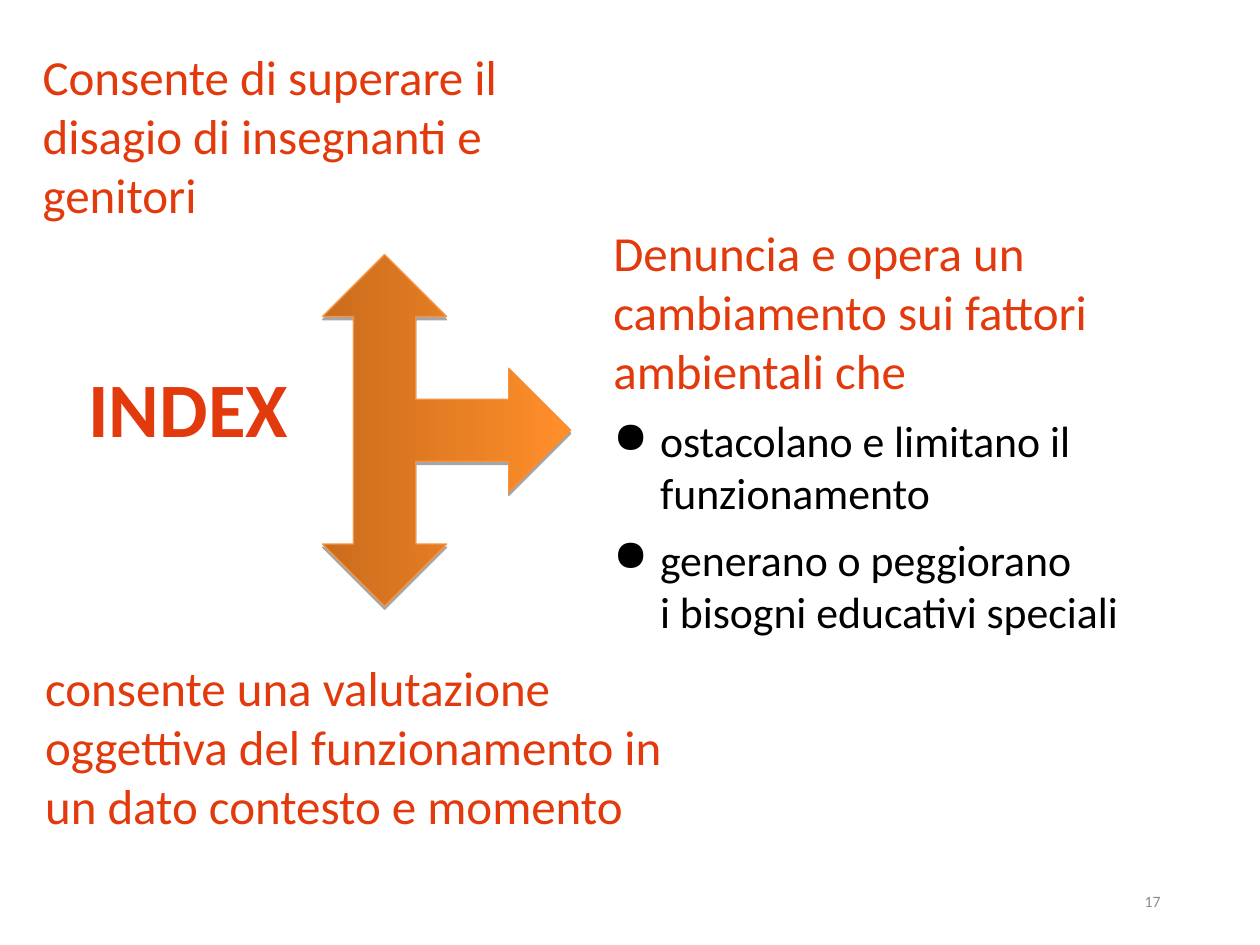
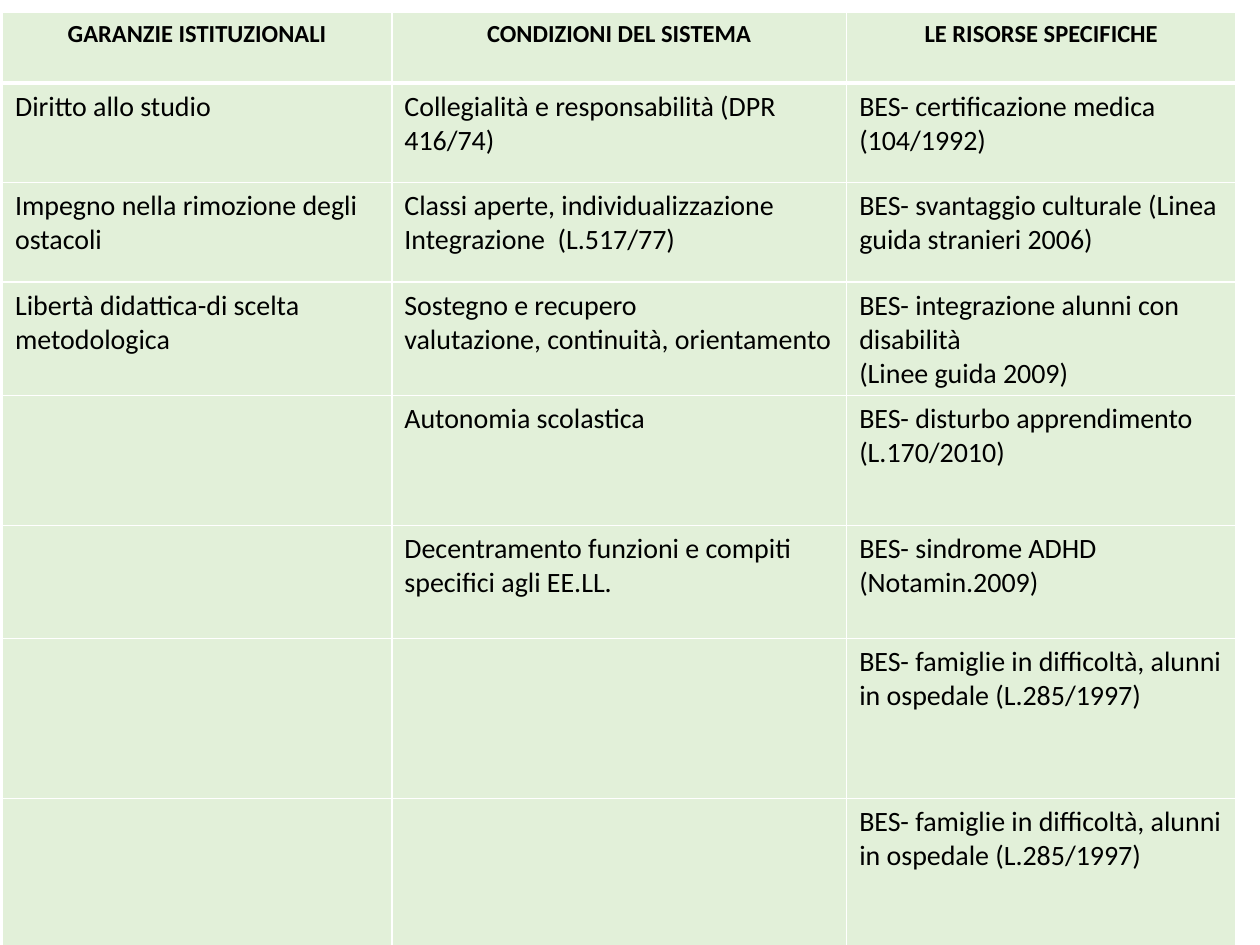
from dataclasses import dataclass
from typing import Optional

from lxml import etree
from pptx import Presentation
from pptx.dml.color import RGBColor
from pptx.enum import shapes, text
from pptx.oxml import parse_xml
from pptx.oxml.ns import nsdecls, qn
from pptx.util import Emu, Pt

EMU_PER_PX = 9144  # 100 px to the inch


def px(length: int) -> Emu:
    return Emu(length * EMU_PER_PX)


# Colours and type sizes
@dataclass(frozen=True)
class Theme:
    font: str = "Calibri"
    accent: str = "E23A0C"
    ink: str = "000000"
    muted: str = "8C8C8C"
    cell: str = "E2F0D9"
    rule: str = "FFFFFF"
    arrow_dark: str = "CB6C1D"
    arrow_light: str = "FF8F2A"
    arrow_edge: str = "F69240"
    label_size: int = 44
    statement_size: int = 28
    bullet_size: int = 25
    body_size: int = 16
    header_size: int = 14
    number_size: int = 9


THEME = Theme()


@dataclass(frozen=True)
class Style:
    size: int
    color: str = THEME.ink
    bold: bool = False
    align: text.PP_ALIGN = text.PP_ALIGN.LEFT
    space_before: int = 0
    bullet: Optional[str] = None


STATEMENT = Style(THEME.statement_size, THEME.accent, space_before=8)
BULLET = Style(THEME.bullet_size, space_before=8, bullet="●")
LABEL = Style(THEME.label_size, THEME.accent, True, text.PP_ALIGN.CENTER)
NUMBER = Style(THEME.number_size, THEME.muted, align=text.PP_ALIGN.RIGHT)
HEADER = Style(THEME.header_size, bold=True, align=text.PP_ALIGN.CENTER)
BODY = Style(THEME.body_size)


@dataclass(frozen=True)
class Box:
    left: int
    top: int
    width: int
    height: int

    def emu(self) -> tuple[Emu, ...]:
        return tuple(map(px, (self.left, self.top, self.width, self.height)))


@dataclass(frozen=True)
class TextBlock:
    box: Box
    lines: tuple[tuple[str, Style], ...]
    anchor: text.MSO_ANCHOR = text.MSO_ANCHOR.TOP


# Slide 1 content
INDEX_BLOCKS = (
    TextBlock(Box(706, 695, 225, 40), (("17", NUMBER),), text.MSO_ANCHOR.MIDDLE),
    TextBlock(Box(0, 281, 299, 84), (("INDEX", LABEL),), text.MSO_ANCHOR.MIDDLE),
    TextBlock(Box(26, 517, 544, 221), (
        ("consente una valutazione oggettiva del funzionamento in un dato contesto e momento", STATEMENT),
    )),
    TextBlock(Box(477, 172, 546, 465), (
        ("Denuncia e opera un cambiamento sui fattori ambientali che", STATEMENT),
        ("ostacolano e limitano il funzionamento", BULLET),
        ("generano o peggiorano \vi bisogni educativi speciali", BULLET),
    )),
    TextBlock(Box(24, 32, 476, 201), (
        ("Consente di superare il disagio di insegnanti e genitori", STATEMENT),
    )),
)
ARROW_BOX = Box(215, 243, 279, 197)

# Slide 2 content
TABLE_BOX = Box(2, 10, 979, 752)
COLUMN_WIDTHS = (309, 361, 309)
ROW_HEIGHTS = (56, 79, 79, 90, 103, 90, 127, 127)
HOSPITAL = "BES- famiglie in difficoltà, alunni in ospedale (L.285/1997)"
TABLE_ROWS = (
    ("GARANZIE ISTITUZIONALI", "CONDIZIONI DEL SISTEMA", "LE RISORSE SPECIFICHE"),
    ("Diritto allo studio", "Collegialità e responsabilità (DPR 416/74)",
     "BES- certificazione medica (104/1992)"),
    ("Impegno nella rimozione degli ostacoli",
     "Classi aperte, individualizzazione\nIntegrazione  (L.517/77)",
     "BES- svantaggio culturale (Linea guida stranieri 2006)"),
    ("Libertà didattica-di scelta metodologica",
     "Sostegno e recupero\nvalutazione, continuità, orientamento",
     "BES- integrazione alunni con disabilità\n(Linee guida 2009)"),
    ("", "Autonomia scolastica", "BES- disturbo apprendimento (L.170/2010)"),
    ("", "Decentramento funzioni e compiti specifici agli EE.LL.",
     "BES- sindrome ADHD\n(Notamin.2009)"),
    ("", "", HOSPITAL),
    ("", "", HOSPITAL),
)


# Shared drawing functions
def style_paragraph(paragraph, style: Style) -> None:
    paragraph.alignment = style.align
    paragraph.space_before = Pt(style.space_before)
    if style.bullet:
        properties = paragraph._p.get_or_add_pPr()
        properties.set("marL", str(px(37)))
        properties.set("indent", str(px(-37)))
        etree.SubElement(properties, qn("a:buChar"), char=style.bullet)
    font = paragraph.font
    font.name = THEME.font
    font.size = Pt(style.size)
    font.bold = style.bold
    font.color.rgb = RGBColor.from_string(style.color)


def draw_text(slide, block: TextBlock) -> None:
    frame = slide.shapes.add_textbox(*block.box.emu()).text_frame
    frame.word_wrap = True
    frame.vertical_anchor = block.anchor
    for index, (words, style) in enumerate(block.lines):
        paragraph = frame.add_paragraph() if index else frame.paragraphs[0]
        paragraph.text = words
        style_paragraph(paragraph, style)


def draw_arrow(slide, box: Box) -> None:
    arrow = slide.shapes.add_shape(shapes.MSO_SHAPE.LEFT_RIGHT_UP_ARROW, *box.emu())
    arrow.rotation = 90
    arrow.fill.gradient()
    arrow.fill.gradient_angle = 90
    for stop, color in zip(arrow.fill.gradient_stops, (THEME.arrow_dark, THEME.arrow_light)):
        stop.color.rgb = RGBColor.from_string(color)
    for stop, position in zip(arrow.fill.gradient_stops, (0, 1)):
        stop.position = position
    arrow.line.color.rgb = RGBColor.from_string(THEME.arrow_edge)
    arrow.line.width = Pt(0.75)
    # Soft drop shadow straight below
    arrow.shadow.inherit = False
    effects = arrow._element.spPr.find(qn("a:effectLst"))
    effects.append(parse_xml(
        f'<a:outerShdw {nsdecls("a")} dist="{Pt(1.8)}" dir="5400000" rotWithShape="0">'
        f'<a:srgbClr val="{THEME.ink}"><a:alpha val="35000"/></a:srgbClr></a:outerShdw>'
    ))


def set_borders(cell, top: int, bottom: int) -> None:
    properties = cell._tc.get_or_add_tcPr()
    for side, width in (("L", 1), ("R", 1), ("T", top), ("B", bottom)):
        properties.append(parse_xml(
            f'<a:ln{side} {nsdecls("a")} w="{Pt(width)}"><a:solidFill>'
            f'<a:srgbClr val="{THEME.rule}"/></a:solidFill></a:ln{side}>'
        ))


def draw_table(slide, box: Box) -> None:
    table = slide.shapes.add_table(len(ROW_HEIGHTS), len(COLUMN_WIDTHS), *box.emu()).table
    table.first_row = table.horz_banding = False
    for column, width in zip(table.columns, COLUMN_WIDTHS):
        column.width = px(width)
    for index, (row, height, texts) in enumerate(zip(table.rows, ROW_HEIGHTS, TABLE_ROWS)):
        row.height = px(height)
        for cell, words in zip(row.cells, texts):
            set_borders(cell, top=3 if index == 1 else 1, bottom=3 if index == 0 else 1)
            cell.fill.solid()
            cell.fill.fore_color.rgb = RGBColor.from_string(THEME.cell)
            cell.text = words
            for paragraph in cell.text_frame.paragraphs:
                style_paragraph(paragraph, BODY if index else HEADER)


def main() -> None:
    presentation = Presentation()
    presentation.slide_width, presentation.slide_height = px(1000), px(750)
    blank = presentation.slide_layouts[6]

    # Slide 1: what the index makes possible
    index_slide = presentation.slides.add_slide(blank)
    for block in INDEX_BLOCKS:
        draw_text(index_slide, block)
    draw_arrow(index_slide, ARROW_BOX)

    # Slide 2: guarantees, conditions and resources
    draw_table(presentation.slides.add_slide(blank), TABLE_BOX)
    presentation.save("out.pptx")


if __name__ == "__main__":
    main()
